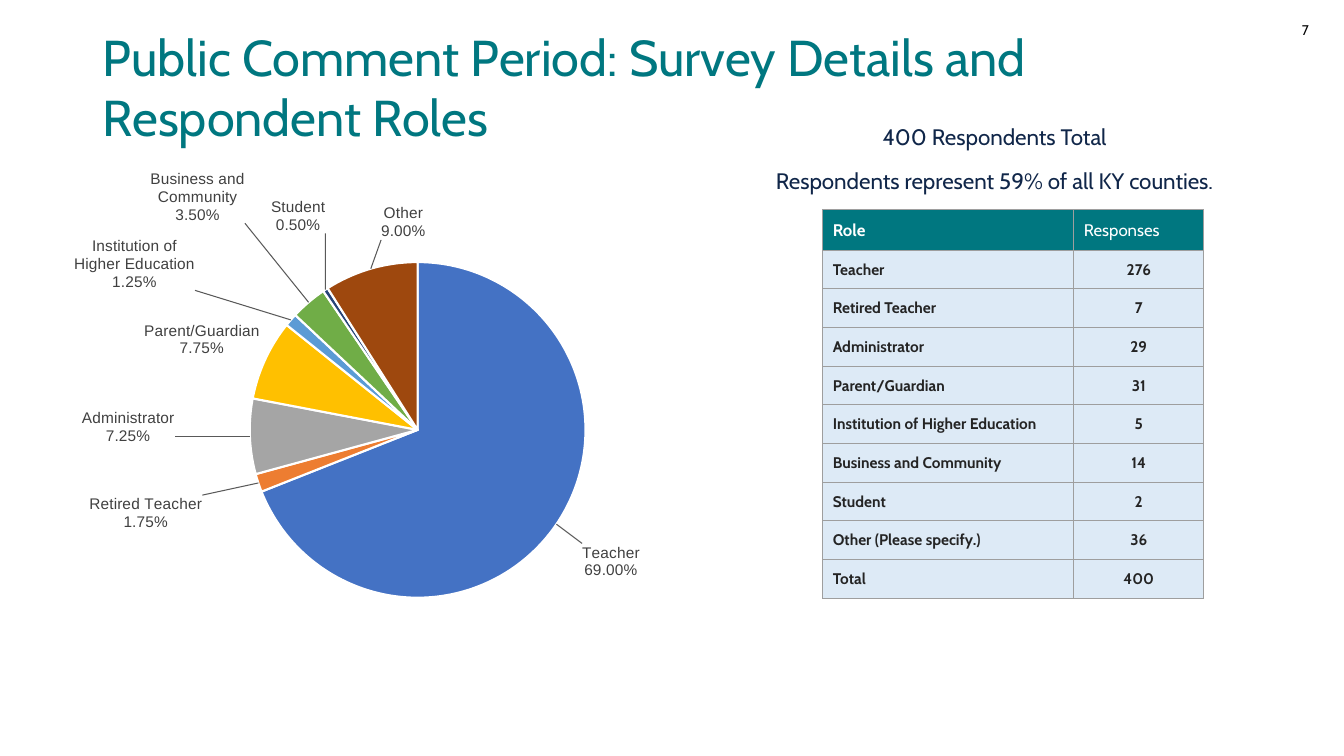
import pptx
import pptx.util
import pptx.oxml
import pptx.oxml.ns
import pptx.chart.data
import pptx.dml.color
import pptx.enum.chart
import pptx.enum.text

Inches, Pt = pptx.util.Inches, pptx.util.Pt
ALIGN, ANCHOR = pptx.enum.text.PP_ALIGN, pptx.enum.text.MSO_ANCHOR

# Content
TITLE = "Public Comment Period: Survey Details and Respondent Roles"
SUMMARY = ["400 Respondents Total ",
           "Respondents represent 59% of all KY counties. "]
ROWS = [("Role", "Responses"), ("Teacher", "276"), ("Retired Teacher", "7"),
        ("Administrator", "29"), ("Parent/Guardian", "31"),
        ("Institution of Higher Education", "5"),
        ("Business and Community", "14"), ("Student", "2"),
        ("Other (Please specify.)", "36"), ("Total", "400")]
# Role, percent, slice colour, label shift as shares of the chart
SLICES = [("Teacher", 69, "4472C4", 0.033, 0.031),
          ("Retired Teacher", 1.75, "ED7D31", -0.08, 0.02),
          ("Administrator", 7.25, "A5A5A5", -0.11, -0.02),
          ("Parent/Guardian", 7.75, "FFC000", 0, 0),
          ("Institution of Higher Education", 1.25, "5B9BD5", -0.145, -0.05),
          ("Business and Community", 3.5, "70AD47", -0.095, -0.145),
          ("Student", 0.5, "264478", 0.005, -0.1),
          ("Other", 9, "9E480E", 0.09, -0.045)]
PLOT = dict(x=0.3, y=0.257, w=0.54, h=0.653)
COLS, HEAD_H, ROW_H = (2.49, 1.29), 0.4, 0.376


def rgb(value):
    return pptx.dml.color.RGBColor.from_string(value)


def add_run(p, text, size, color, bold=False):
    r = p.add_run()
    r.text = text
    r.font.name, r.font.size, r.font.bold = "Cabin", Pt(size), bold
    r.font.color.rgb = rgb(color)


def xml(tag, body, attrs=""):
    names = pptx.oxml.ns.nsdecls("a", "c")
    return pptx.oxml.parse_xml(f"<{tag} {names} {attrs}>{body}</{tag}>")


def layout_xml(target="", **places):
    modes = "".join(f'<c:{k}Mode val="edge"/>' for k in "xy") if target else ""
    values = "".join(f'<c:{k} val="{v}"/>' for k, v in places.items())
    return f"<c:manualLayout>{target}{modes}{values}</c:manualLayout>"


prs = pptx.Presentation()
prs.slide_width, prs.slide_height = Inches(13.33), Inches(7.5)
s = prs.slides.add_slide(prs.slide_layouts[5])

# Title
title = s.shapes.title
title.left, title.top = Inches(0.92), Inches(0.13)
title.width, title.height = Inches(11.5), Inches(1.45)
title.text_frame.vertical_anchor = ANCHOR.MIDDLE
p = title.text_frame.paragraphs[0]
p.alignment = ALIGN.LEFT
add_run(p, TITLE, 36, "007780")

# Slide number
tf = s.shapes.add_textbox(Inches(12.42), Inches(0.1), Inches(0.66), Inches(0.4)).text_frame
tf.word_wrap, tf.vertical_anchor = True, ANCHOR.MIDDLE
tf.paragraphs[0].alignment = ALIGN.RIGHT
add_run(tf.paragraphs[0], "7", 10, "000000")

# Summary
tf = s.shapes.add_textbox(Inches(7.21), Inches(1.12), Inches(5.36), Inches(0.91)).text_frame
tf.word_wrap = True
tf.margin_top = tf.margin_bottom = Inches(0.1)
for i, line in enumerate(SUMMARY):
    p = tf.add_paragraph() if i else tf.paragraphs[0]
    p.alignment = ALIGN.CENTER
    if i:
        p.space_before = Pt(12)
    add_run(p, line, 16, "102649")

# Response table
table = s.shapes.add_table(len(ROWS), len(COLS), Inches(8.16), Inches(2.08),
                           Inches(sum(COLS)), Inches(HEAD_H + 9 * ROW_H)).table
for col, width in zip(table.columns, COLS):
    col.width = Inches(width)
for i, row in enumerate(ROWS):
    table.rows[i].height = Inches(ROW_H if i else HEAD_H)
    for j, text in enumerate(row):
        cell = table.cell(i, j)
        cell.margin_left = cell.margin_right = Inches(0.1)
        cell.margin_top = cell.margin_bottom = Inches(0.1)
        cell.fill.solid()
        cell.fill.fore_color.rgb = rgb("DDEAF6" if i else "007780")
        p = cell.text_frame.paragraphs[0]
        p.alignment = ALIGN.CENTER if i and j else ALIGN.LEFT
        add_run(p, text, 11 if i else 12, "242424" if i else "FFFFFF", bool(i) or j == 0)
        for k, side in enumerate("LRTB"):
            border = xml(f"a:ln{side}", '<a:solidFill><a:srgbClr val="9E9E9E"/></a:solidFill>',
                         'w="9525"')
            cell._tc.get_or_add_tcPr().insert(k, border)

# Pie chart
data = pptx.chart.data.CategoryChartData()
data.categories = [item[0] for item in SLICES]
data.add_series("Series 1", [item[1] for item in SLICES])
chart = s.shapes.add_chart(pptx.enum.chart.XL_CHART_TYPE.PIE, Inches(0.58), Inches(1.29),
                           Inches(6.25), Inches(5.1), data).chart
chart.has_title = chart.has_legend = False
chart.font.name, chart.font.size = "Arial", Pt(10)
chart.font.color.rgb = rgb("000000")
chart.plots[0].vary_by_categories = True
series = chart.plots[0].series[0]
for i, item in enumerate(SLICES):
    fmt = series.points[i].format
    fmt.fill.solid()
    fmt.fill.fore_color.rgb = rgb(item[2])
    fmt.line.color.rgb = rgb("FFFFFF")
    fmt.line.width = Pt(1.5)

# Plot area position
area = chart._chartSpace.chart.plotArea
for old in area.findall(pptx.oxml.ns.qn("c:layout")):
    area.remove(old)
area.insert(0, xml("c:layout", layout_xml('<c:layoutTarget val="inner"/>', **PLOT)))

# Slice labels with leader lines
SHOW = {"LegendKey": 0, "Val": 0, "CatName": 1, "SerName": 0, "Percent": 1, "BubbleSize": 0}
label = ('<c:numFmt formatCode="0.00%" sourceLinked="0"/><c:spPr><a:noFill/></c:spPr>'
         '<c:txPr><a:bodyPr/><a:p><a:pPr><a:defRPr sz="1100" b="0"><a:solidFill>'
         '<a:srgbClr val="404040"/></a:solidFill><a:latin typeface="Arial"/></a:defRPr></a:pPr>'
         '<a:endParaRPr lang="en-US"/></a:p></c:txPr><c:dLblPos val="outEnd"/>'
         + "".join(f'<c:show{k} val="{v}"/>' for k, v in SHOW.items())
         + "<c:separator>\n</c:separator>")
points = "".join(f'<c:dLbl><c:idx val="{i}"/><c:layout>{layout_xml(x=dx, y=dy)}</c:layout>'
                 f"{label}</c:dLbl>" for i, (_, _, _, dx, dy) in enumerate(SLICES))
leader = ('<c:showLeaderLines val="1"/><c:leaderLines><c:spPr><a:ln w="9525"><a:solidFill>'
          '<a:srgbClr val="595959"/></a:solidFill></a:ln></c:spPr></c:leaderLines>')
categories = series._element.find(pptx.oxml.ns.qn("c:cat"))
categories.addprevious(xml("c:dLbls", points + label + leader))

prs.save("out.pptx")
